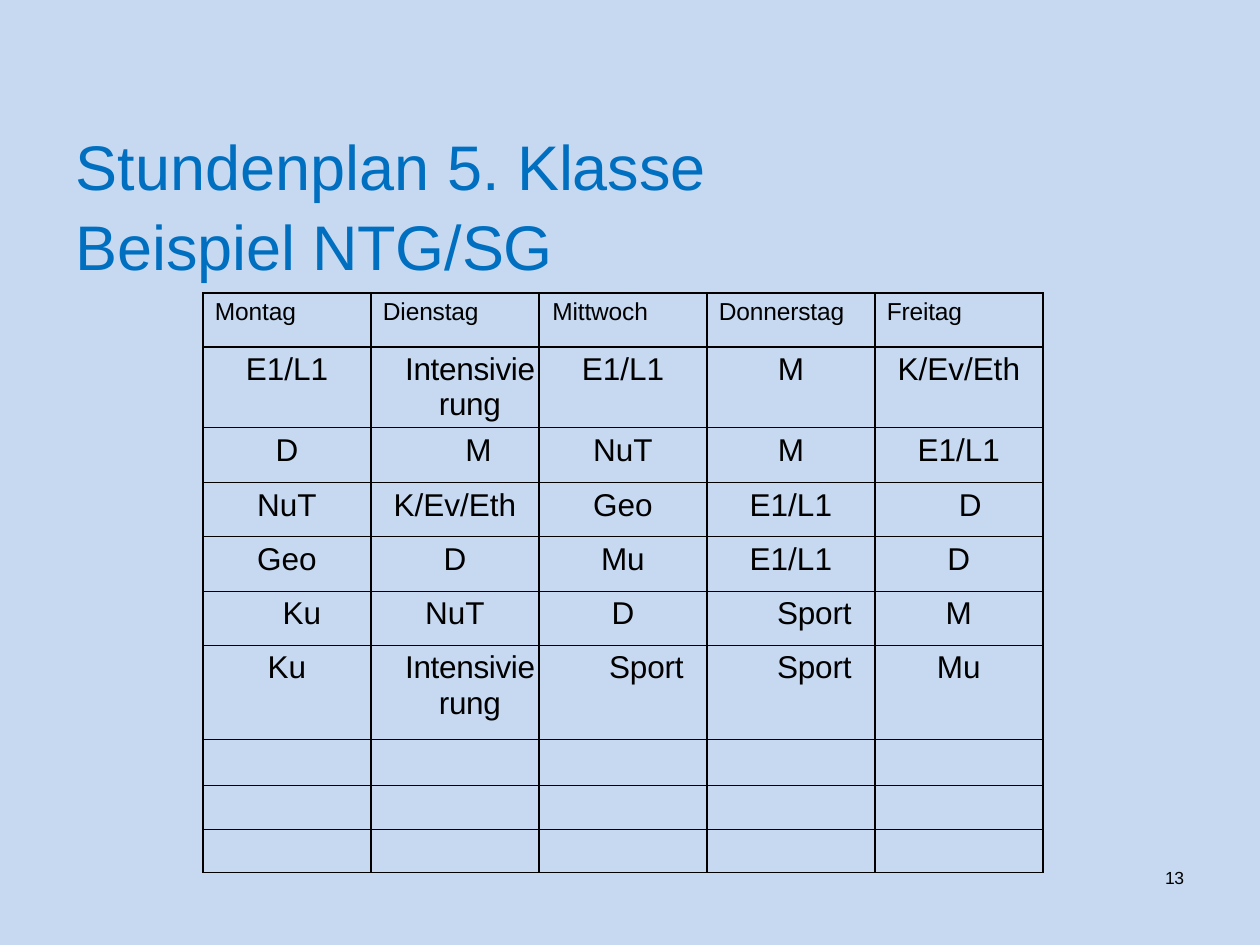
from lxml.etree import SubElement
from pptx import Presentation
from pptx.dml.color import RGBColor
from pptx.enum.text import PP_ALIGN as Align
from pptx.oxml.ns import qn
from pptx.util import Pt

PX = 914400 // 126
COLORS = {"background": "C6D9F1", "title": "006FC0", "ink": "000000"}
COLUMN_WIDTH = 168
ROW_HEIGHTS = [54, 54, 55, 54, 55, 54, 94, 46, 44, 43]
DAYS = ["Montag", "Dienstag", "Mittwoch", "Donnerstag", "Freitag"]
LESSONS = [
    ["E1/L1", "Intensivierung", "E1/L1", "M", "K/Ev/Eth"],
    ["D", "M", "NuT", "M", "E1/L1"],
    ["NuT", "K/Ev/Eth", "Geo", "E1/L1", "D"],
    ["Geo", "D", "Mu", "E1/L1", "D"],
    ["Ku", "NuT", "D", "Sport", "M"],
    ["Ku", "Intensivierung", "Sport", "Sport", "Mu"],
]
SUBJECT_STYLES = {"Intensivierung": (30, -20), "Sport": (47, -10)}
SHIFTED_LESSONS = {(1, 1): (47, -10), (2, 4): (23, 0), (4, 0): (30, 0)}


def px(value):
    return value * PX


def rgb(name):
    return RGBColor.from_string(COLORS[name])


def add_run(paragraph, text, size, color="ink", spacing=0):
    run = paragraph.add_run()
    run.text = text
    run.font.size = Pt(size)
    run.font.name = "Arial"
    run.font.color.rgb = rgb(color)
    if spacing:
        run.font._element.set("spc", str(spacing))


def indent(paragraph, amount):
    paragraph._p.get_or_add_pPr().set("marL", str(px(amount)))


def add_text_frame(slide, box, top_inset=0):
    frame = slide.shapes.add_textbox(*map(px, box)).text_frame
    frame.margin_left = frame.margin_right = frame.margin_bottom = 0
    frame.margin_top = px(top_inset)
    frame.word_wrap = True
    return frame


def add_title(slide, box):
    heading = add_text_frame(slide, box, 1).paragraphs[0]
    indent(heading, 2)
    heading.line_spacing = 1.06
    add_run(heading, "Stundenplan 5. ", 36, "title")
    add_run(heading, "Klasse", 36, "title", -10)
    heading.add_line_break()
    add_run(heading, "Beispiel NTG/SG", 36, "title", -10)


def add_page_number(slide, box):
    number = add_text_frame(slide, box).paragraphs[0]
    indent(number, 5)
    add_run(number, "13", 10, spacing=-20)


def format_cell(cell):
    cell.margin_left = cell.margin_right = cell.margin_bottom = 0
    cell.margin_top = px(5)
    properties = cell._tc.get_or_add_tcPr()
    for side in ("a:lnL", "a:lnR", "a:lnT", "a:lnB"):
        border = SubElement(properties, qn(side), w=str(Pt(1)))
        fill = SubElement(border, qn("a:solidFill"))
        SubElement(fill, qn("a:srgbClr"), val=COLORS["ink"])
    cell.fill.background()


def add_day(cell, day):
    paragraph = cell.text_frame.paragraphs[0]
    paragraph.space_before = Pt(3.2)
    if day == "Mittwoch":
        paragraph.alignment = Align.RIGHT
        cell.margin_right = px(59)
    else:
        indent(paragraph, 12)
    add_run(paragraph, day, 14, spacing=-10)


def add_lesson(cell, subject, style):
    shift, spacing = style
    paragraph = cell.text_frame.paragraphs[0]
    paragraph.alignment = Align.CENTER
    paragraph.space_before = Pt(3.1)
    indent(paragraph, shift)
    add_run(paragraph, subject, 18, spacing=spacing)


def add_timetable(slide, left, top):
    width = COLUMN_WIDTH * len(DAYS)
    table = slide.shapes.add_table(
        len(ROW_HEIGHTS), len(DAYS), px(left), px(top), px(width), px(sum(ROW_HEIGHTS))
    ).table
    table.first_row = table.horz_banding = False
    for column in table.columns:
        column.width = px(COLUMN_WIDTH)
    for row, height in zip(table.rows, ROW_HEIGHTS):
        row.height = px(height)
    for cell in table.iter_cells():
        format_cell(cell)
    for column, day in enumerate(DAYS):
        add_day(table.cell(0, column), day)
    for hour, subjects in enumerate(LESSONS):
        for column, subject in enumerate(subjects):
            usual = SUBJECT_STYLES.get(subject, (0, 0))
            style = SHIFTED_LESSONS.get((hour, column), usual)
            add_lesson(table.cell(hour + 1, column), subject, style)


def main():
    deck = Presentation()
    deck.slide_width, deck.slide_height = px(1260), px(945)
    slide = deck.slides.add_slide(deck.slide_layouts[6])
    slide.background.fill.solid()
    slide.background.fill.fore_color.rgb = rgb("background")
    add_title(slide, (74, 122, 1011, 155))
    add_page_number(slide, (1160, 867, 32, 23))
    add_timetable(slide, 203, 293)
    deck.save("out.pptx")


if __name__ == "__main__":
    main()
